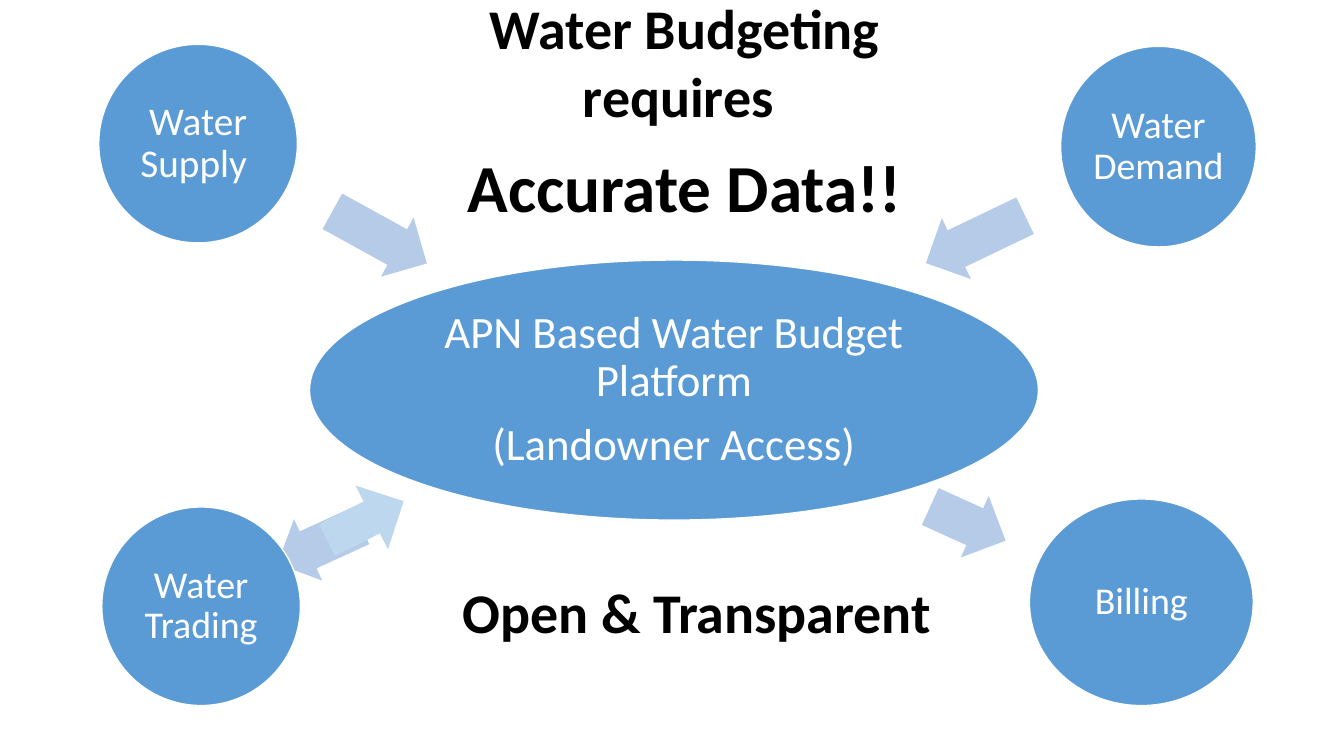
from dataclasses import dataclass

from pptx import Presentation
from pptx.dml.color import RGBColor
from pptx.enum.shapes import MSO_SHAPE
from pptx.enum.text import MSO_ANCHOR, MSO_AUTO_SIZE, PP_ALIGN
from pptx.util import Emu, Pt

EMU_PER_PX = 9144
ELLIPSE = MSO_SHAPE.OVAL
ARROW = MSO_SHAPE.RIGHT_ARROW
CENTER = PP_ALIGN.CENTER
TOP, MIDDLE = MSO_ANCHOR.TOP, MSO_ANCHOR.MIDDLE
NO_AUTO_SIZE = MSO_AUTO_SIZE.NONE
TITLE_ONLY_LAYOUT = 5

FONT = "Calibri"
BLUE, PALE_BLUE, SKY_BLUE = "5B9BD5", "B5CBE7", "BDD7EE"
WHITE, BLACK = "FFFFFF", "000000"


@dataclass(frozen=True)
class Box:
    left: int
    top: int
    width: int
    height: int


@dataclass(frozen=True)
class Node:
    text: str
    box: Box
    size: int


@dataclass(frozen=True)
class Arrow:
    box: Box
    rotation: float
    color: str = PALE_BLUE
    shaft: float = 0.6


# Back to front: each arrow lies under the node it serves.
DIAGRAM = [
    Node("APN Based Water Budget Platform\n(Landowner Access)", Box(307, 258, 723, 258), 32),
    Arrow(Box(323, 202, 107, 67), 28.9),
    Node("Water Supply ", Box(98, 44, 197, 197), 28),
    Arrow(Box(913, 204, 109, 67), 154.4),
    Node("Water Demand", Box(1052, 46, 194, 199), 27),
    Arrow(Box(919, 486, 82, 67), 24.4),
    Node("Billing", Box(1021, 495, 222, 205), 27),
    Arrow(Box(271, 507, 91, 67), 155.4),
    Node("Water Trading", Box(101, 503, 197, 197), 27),
    Arrow(Box(320, 481, 85, 71), 333, SKY_BLUE, 0.5),
]


def px(length: int) -> Emu:
    return Emu(length * EMU_PER_PX)


def rgb(color: str) -> RGBColor:
    return RGBColor.from_string(color)


def place(shape, box: Box) -> None:
    shape.left, shape.top = px(box.left), px(box.top)
    shape.width, shape.height = px(box.width), px(box.height)


def add_filled(slide, kind, box: Box, color: str):
    shape = slide.shapes.add_shape(
        kind, px(box.left), px(box.top), px(box.width), px(box.height)
    )
    shape.shadow.inherit = False
    shape.fill.solid()
    shape.fill.fore_color.rgb = rgb(color)
    return shape


def write(shape, text: str, sizes: list[int], color: str, anchor, bold: bool = False) -> None:
    """Fill the shape with centred paragraphs, one size for each."""
    frame = shape.text_frame
    frame.text = text
    frame.word_wrap = True
    frame.auto_size = NO_AUTO_SIZE
    frame.vertical_anchor = anchor
    for paragraph, size in zip(frame.paragraphs, sizes):
        paragraph.alignment = CENTER
        paragraph.space_after = Pt(12)
        for run in paragraph.runs:
            font = run.font
            font.name, font.size, font.bold = FONT, Pt(size), bold
            font.color.rgb = rgb(color)


def draw_node(slide, node: Node) -> None:
    shape = add_filled(slide, ELLIPSE, node.box, BLUE)
    shape.line.color.rgb = rgb(WHITE)
    shape.line.width = Pt(1)
    frame = shape.text_frame
    frame.margin_left = frame.margin_right = px(4)
    frame.margin_top = frame.margin_bottom = px(4)
    write(shape, node.text, [node.size] * 2, WHITE, MIDDLE)
    for paragraph in frame.paragraphs:
        paragraph.line_spacing = 0.9
        paragraph.space_after = Pt(round(node.size * 0.35))


def draw_arrow(slide, arrow: Arrow) -> None:
    shape = add_filled(slide, ARROW, arrow.box, arrow.color)
    shape.line.fill.background()
    shape.adjustments[0] = arrow.shaft
    shape.adjustments[1] = 0.5
    shape.rotation = arrow.rotation


def main() -> None:
    presentation = Presentation()
    presentation.slide_width, presentation.slide_height = px(1333), px(750)
    slide = presentation.slides.add_slide(presentation.slide_layouts[TITLE_ONLY_LAYOUT])

    for item in DIAGRAM:
        if isinstance(item, Node):
            draw_node(slide, item)
        else:
            draw_arrow(slide, item)

    title = slide.shapes.title
    place(title, Box(453, -11, 452, 242))
    write(title, "Water Budgeting requires \nAccurate Data!!", [40, 48], BLACK, TOP, bold=True)

    motto = slide.shapes.add_textbox(px(441), px(568), px(500), px(77))
    write(motto, "Open & Transparent", [40], BLACK, TOP, bold=True)

    presentation.save("out.pptx")


if __name__ == "__main__":
    main()
